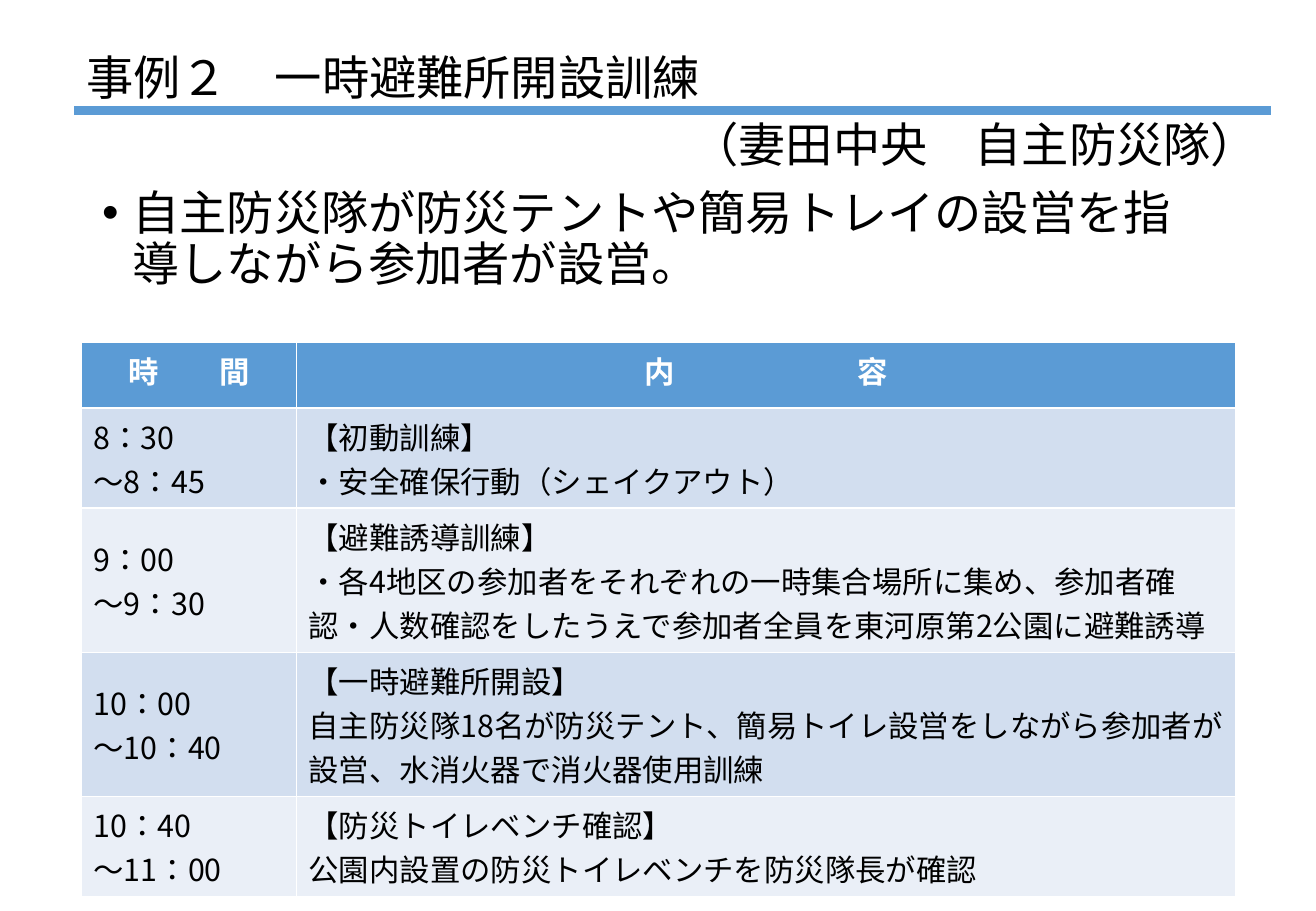
import pptx
import pptx.util
import pptx.dml.color
import pptx.enum.text
import pptx.enum.shapes
import pptx.oxml.ns
import lxml.etree

FONT = "Noto Sans CJK JP"
COLORS = {
    "text": "000000",
    "white": "FFFFFF",
    "accent": "5B9BD5",
    "band_dark": "D2DEEF",
    "band_light": "EAEFF7",
}
Inches = pptx.util.Inches
ALIGN = pptx.enum.text.PP_ALIGN
ANCHOR = pptx.enum.text.MSO_ANCHOR


def rgb(name):
    return pptx.dml.color.RGBColor.from_string(COLORS[name])


def write_text(text_frame, text, size=28, color="text", bold=False,
               align=ALIGN.LEFT, spacing=0.9, before=0):
    text_frame.word_wrap = True
    text_frame.text = text
    for paragraph in text_frame.paragraphs:
        paragraph.alignment = align
        paragraph.line_spacing = spacing
        paragraph.space_before = pptx.util.Pt(before)
        for run in paragraph.runs:
            run.font.size = pptx.util.Pt(size)
            run.font.bold = bold
            run.font.color.rgb = rgb(color)
            run.font.name = FONT
            east_asian = lxml.etree.Element(pptx.oxml.ns.qn("a:ea"), typeface=FONT)
            run.font._element.find(pptx.oxml.ns.qn("a:latin")).addnext(east_asian)


presentation = pptx.Presentation()
presentation.slide_width = Inches(10.83)
presentation.slide_height = Inches(7.5)
slide = presentation.slides.add_slide(presentation.slide_layouts[1])

title = slide.shapes.title
body = slide.placeholders[1]
subtitle = slide.shapes.add_textbox(0, 0, 0, 0)
text_width = 9.34
for shape, left, top, height, anchor in [
    (title, 0.61, 0.38, 0.56, ANCHOR.MIDDLE),
    (body, 0.74, 1.51, 1.05, ANCHOR.TOP),
    (subtitle, 1.11, 0.93, 0.56, ANCHOR.MIDDLE),
]:
    shape.left, shape.top = Inches(left), Inches(top)
    shape.width, shape.height = Inches(text_width), Inches(height)
    shape.text_frame.vertical_anchor = anchor
    shape.text_frame.auto_size = pptx.enum.text.MSO_AUTO_SIZE.NONE

write_text(title.text_frame, "事例２　一時避難所開設訓練")
write_text(body.text_frame, "自主防災隊が防災テントや簡易トレイの設営を指導しながら参加者が設営。", before=10)
write_text(subtitle.text_frame, "（妻田中央　自主防災隊）", align=ALIGN.RIGHT)

bullet_properties = body.text_frame.paragraphs[0]._p.get_or_add_pPr()
bullet_properties.set("marL", str(Inches(0.25)))
bullet_properties.set("indent", str(-Inches(0.25)))

schedule = [
    ("時　　間", "内　　　　　　容"),
    ("8：30\n～8：45", "【初動訓練】\n・安全確保行動（シェイクアウト）"),
    ("9：00\n～9：30",
     "【避難誘導訓練】\n・各4地区の参加者をそれぞれの一時集合場所に集め、"
     "参加者確認・人数確認をしたうえで参加者全員を東河原第2公園に避難誘導"),
    ("10：00\n～10：40",
     "【一時避難所開設】\n自主防災隊18名が防災テント、簡易トイレ設営をしながら"
     "参加者が設営、水消火器で消火器使用訓練"),
    ("10：40\n～11：00", "【防災トイレベンチ確認】\n公園内設置の防災トイレベンチを防災隊長が確認"),
]
column_widths = [1.77, 7.73]
header_height, row_height = 0.54, 0.73
table = slide.shapes.add_table(
    len(schedule), len(column_widths), Inches(0.67), Inches(2.82),
    Inches(sum(column_widths)), Inches(header_height + row_height * (len(schedule) - 1)),
).table
for column, width in zip(table.columns, column_widths):
    column.width = Inches(width)

for row_index, entries in enumerate(schedule):
    header = row_index == 0
    table.rows[row_index].height = Inches(header_height if header else row_height)
    band = "accent" if header else "band_dark" if row_index % 2 else "band_light"
    for column_index, text in enumerate(entries):
        cell = table.cell(row_index, column_index)
        cell.fill.solid()
        cell.fill.fore_color.rgb = rgb(band)
        if column_index == 0 and not header:
            cell.vertical_anchor = ANCHOR.MIDDLE
        write_text(cell.text_frame, text, size=18, spacing=1.0, bold=header,
                   color="white" if header else "text",
                   align=ALIGN.CENTER if header else ALIGN.LEFT)

title_rule = slide.shapes.add_connector(
    pptx.enum.shapes.MSO_CONNECTOR.STRAIGHT,
    Inches(0.61), Inches(0.91), Inches(10.46), Inches(0.91))
title_rule.line.color.rgb = rgb("accent")
title_rule.line.width = pptx.util.Pt(5.75)
lxml.etree.SubElement(title_rule._element.spPr, pptx.oxml.ns.qn("a:effectLst"))

presentation.save("out.pptx")
